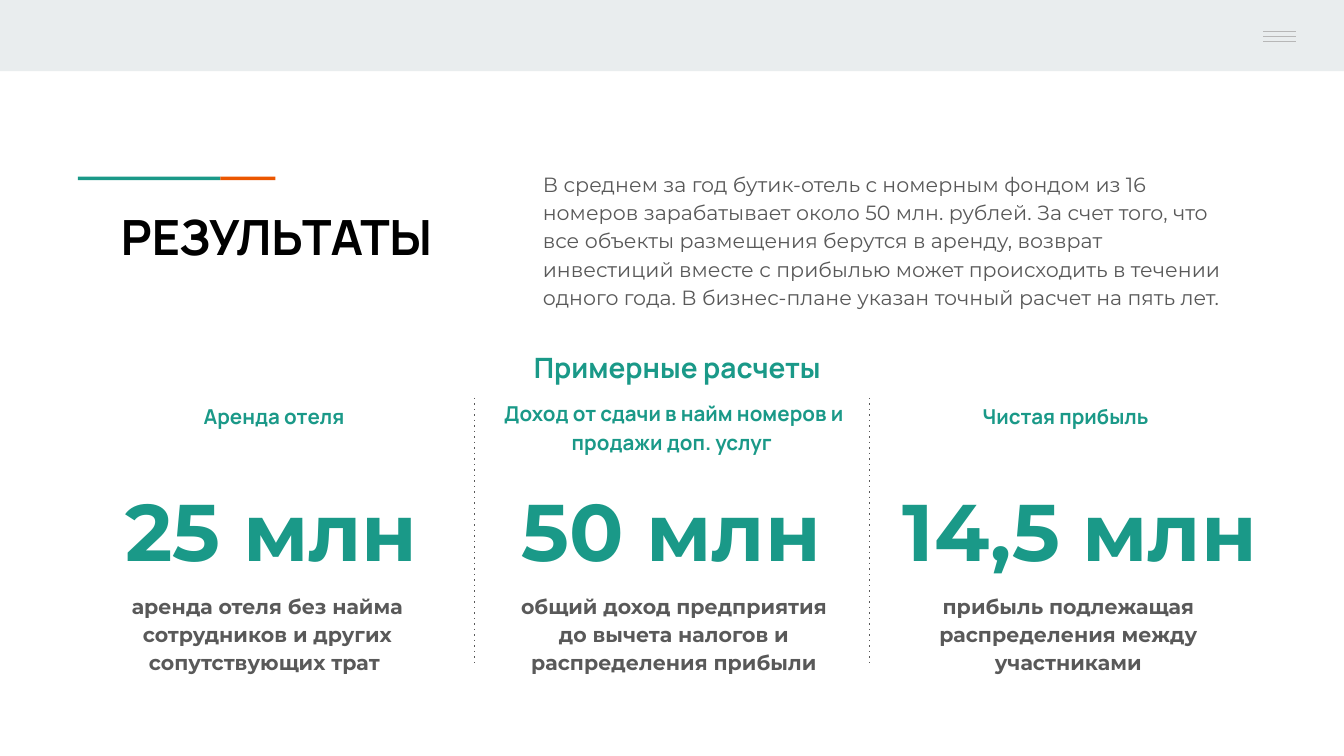
from lxml import etree
from pptx import Presentation
from pptx.dml.color import RGBColor
from pptx.enum.shapes import MSO_CONNECTOR, MSO_SHAPE
from pptx.enum.text import MSO_ANCHOR, PP_ALIGN
from pptx.oxml.ns import qn
from pptx.util import Inches, Pt

TEAL = RGBColor(0x1A, 0x99, 0x88)
ORANGE = RGBColor(0xEB, 0x56, 0x00)
GRAY = RGBColor(0x59, 0x59, 0x59)
MENU_GRAY = RGBColor(0xB7, 0xB7, 0xB7)
BAND_GRAY = RGBColor(0xE9, 0xED, 0xEE)
BLACK = RGBColor(0, 0, 0)
HEADING_FONT, BODY_FONT = "Manrope", "Montserrat"
LEFT, CENTER = PP_ALIGN.LEFT, PP_ALIGN.CENTER
TOP = MSO_ANCHOR.TOP
RECTANGLE, STRAIGHT = MSO_SHAPE.RECTANGLE, MSO_CONNECTOR.STRAIGHT
TITLE_ONLY = 5
COLUMNS, ROWS = 100, 56.25

INTRO = (
    "В среднем за год бутик-отель с номерным фондом из 16 номеров зарабатывает "
    "около 50 млн. рублей. За счет того, что все объекты размещения берутся в аренду, "
    "возврат инвестиций вместе с прибылью может происходить в течении одного года. "
    "В бизнес-плане указан точный расчет на пять лет."
)
RESULTS = [
    (("Аренда отеля ", 10.9, 28.8, 19.3), ("25 млн", 6.2, 28),
     ("аренда отеля без найма сотрудников и других сопутствующих трат ", 8, 23.8)),
    (("Доход от сдачи в найм номеров и продажи доп. услуг ", 36.5, 28.6, 27.3),
     ("50 млн", 36.3, 27.3),
     ("общий доход предприятия до вычета налогов и распределения прибыли", 36.9, 26.5)),
    (("Чистая прибыль ", 69.8, 28.8, 19.3), (" 14,5 млн", 63.8, 31.4),
     ("прибыль подлежащая распределения между участниками", 68.2, 22.6)),
]


class SlideBuilder:
    """Draws styled elements on one slide, placed by grid columns and rows."""

    def __init__(self, presentation):
        self.slide = presentation.slides.add_slide(presentation.slide_layouts[TITLE_ONLY])
        self.column = presentation.slide_width / COLUMNS
        self.row = presentation.slide_height / ROWS

    def place(self, left, top, width, height):
        return (round(left * self.column), round(top * self.row),
                round(width * self.column), round(height * self.row))

    def bar(self, left, top, width, height, color):
        shape = self.slide.shapes.add_shape(RECTANGLE, *self.place(left, top, width, height))
        shape.shadow.inherit = False
        shape.fill.solid()
        shape.fill.fore_color.rgb = color
        shape.line.fill.background()

    def line(self, start, end, color, dash=None):
        connector = self.slide.shapes.add_connector(STRAIGHT, *self.place(*start, *end))
        connector.line.color.rgb = color
        connector.line.width = Pt(0.75)
        properties = connector._element.spPr
        if dash:
            outline = properties.find(qn("a:ln"))
            etree.SubElement(outline, qn("a:prstDash")).set("val", dash)
        etree.SubElement(properties, qn("a:effectLst"))

    def fill_text(self, shape, text, size, color, font, bold, align):
        frame = shape.text_frame
        frame.word_wrap = True
        frame.vertical_anchor = TOP
        frame.margin_left = frame.margin_right = Inches(0.1)
        frame.margin_top = frame.margin_bottom = Inches(0.1)
        paragraph = frame.paragraphs[0]
        paragraph.alignment = align
        run = paragraph.add_run()
        run.text = text
        run.font.size = Pt(size)
        run.font.name = font
        run.font.bold = bold
        run.font.color.rgb = color
        return paragraph

    def title(self, text, area):
        shape = self.slide.shapes.title
        shape.left, shape.top, shape.width, shape.height = self.place(*area)
        paragraph = self.fill_text(shape, text, 26, BLACK, HEADING_FONT, True, LEFT)
        paragraph.line_spacing = 1.0
        paragraph.space_before = Pt(0)

    def text(self, text, area, size, color, font, bold=True, align=CENTER):
        shape = self.slide.shapes.add_textbox(*self.place(*area))
        paragraph = self.fill_text(shape, text, size, color, font, bold, align)
        paragraph.line_spacing = 1.15
        paragraph.space_after = Pt(16)


def main():
    presentation = Presentation()
    presentation.slide_width, presentation.slide_height = Inches(10), Inches(5.625)
    builder = SlideBuilder(presentation)

    builder.bar(0, 0, COLUMNS, 5.3, BAND_GRAY)
    builder.bar(5.8, 13.15, 10.6, 0.25, TEAL)
    builder.bar(16.4, 13.15, 4.1, 0.25, ORANGE)
    for index in range(3):
        row = 2.35 + 0.37 * index
        builder.line((94, row), (96.4, row), MENU_GRAY)

    builder.title("РЕЗУЛЬТАТЫ", (8, 14.4, 30.6, 11.3))
    builder.text(INTRO, (39.4, 11.5, 53.1, 11.3), 11, GRAY, BODY_FONT, False, LEFT)
    builder.text("Примерные расчеты", (37.5, 24.7, 25.8, 4.5), 15, TEAL, HEADING_FONT)

    for column in (35.3, 64.7):
        builder.line((column, 29.6), (column, 49.6), GRAY, "dot")
    for heading, amount, note in RESULTS:
        label, left, top, width = heading
        builder.text(label, (left, top, width, 4.5), 11, TEAL, HEADING_FONT)
        label, left, width = amount
        builder.text(label, (left, 33.7, width, 10.4), 43, TEAL, BODY_FONT)
        label, left, width = note
        builder.text(label, (left, 42.9, width, 8.1), 11, GRAY, BODY_FONT)

    presentation.save("out.pptx")


if __name__ == "__main__":
    main()
